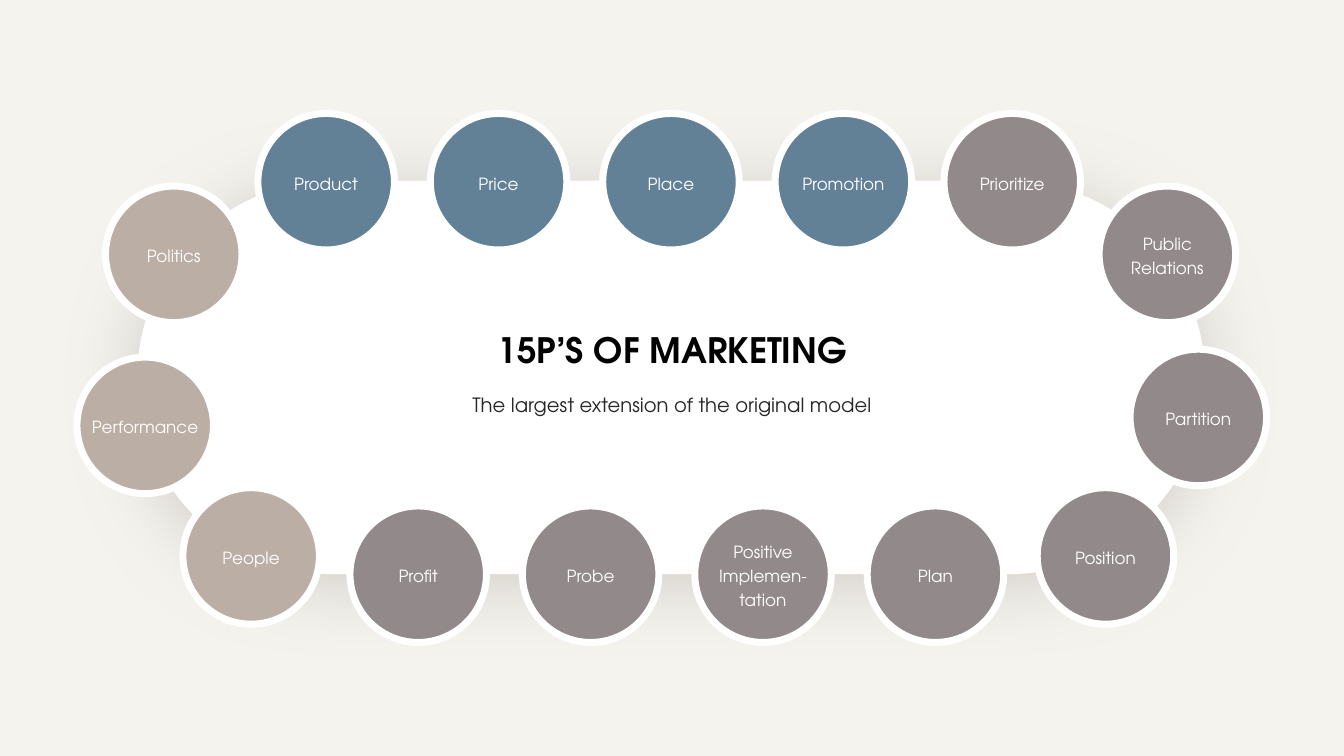
from dataclasses import dataclass

from lxml import etree
from pptx import Presentation
from pptx.dml.color import RGBColor
from pptx.enum.shapes import MSO_SHAPE
from pptx.enum.text import MSO_ANCHOR, MSO_AUTO_SIZE, PP_ALIGN
from pptx.oxml.ns import qn
from pptx.util import Cm, Pt

OVAL, PILL = MSO_SHAPE.OVAL, MSO_SHAPE.ROUNDED_RECTANGLE
TOP, MIDDLE = MSO_ANCHOR.TOP, MSO_ANCHOR.MIDDLE
CENTER, FIXED = PP_ALIGN.CENTER, MSO_AUTO_SIZE.NONE


@dataclass(frozen=True)
class Theme:
    font: str = "TeX Gyre Adventor"
    back: str = "F4F3EE"
    white: str = "FFFFFF"
    shade: str = "D1CCC6"
    blue: str = "628196"
    gray: str = "92898A"
    sand: str = "BBAEA5"
    black: str = "000000"
    dark: str = "262626"
    head: int = 25
    sub: int = 14
    label: int = 12


theme = Theme()


def paint(fill, color):
    fill.solid()
    fill.fore_color.rgb = RGBColor.from_string(color)


def write(shape, text, size, color, anchor=TOP, wrap=True, bold=False):
    frame = shape.text_frame
    frame.text = text
    for key, value in {"auto_size": FIXED, "word_wrap": wrap,
                       "vertical_anchor": anchor}.items():
        setattr(frame, key, value)
    line = frame.paragraphs[0]
    line.alignment = CENTER
    font = line.runs[0].font
    for key, value in {"name": theme.font, "size": Pt(size), "bold": bold}.items():
        setattr(font, key, value)
    font.color.rgb = RGBColor.from_string(color)


deck = Presentation()
deck.slide_width, deck.slide_height = Cm(33.87), Cm(19.05)
slide = deck.slides.add_slide(deck.slide_layouts[5])
shapes = slide.shapes
paint(slide.background.fill, theme.back)

# White pill with a soft shadow
pill = shapes.add_shape(PILL, Cm(3.46), Cm(4.55), Cm(26.91), Cm(9.92))
pill.adjustments[0] = 0.5
paint(pill.fill, theme.white)
pill.line.fill.background()
pill.shadow.inherit = False
effects = pill.element.spPr.find(qn("a:effectLst"))
shadow = etree.SubElement(effects, qn("a:outerShdw"), blurRad=str(Pt(55)),
                          dist=str(Pt(7)), dir="5400000", algn="ctr", rotWithShape="0")
etree.SubElement(shadow, qn("a:srgbClr"), val=theme.shade)

# Circles, clockwise: label, colour, centre x and y in cm
SIZE, STEP = 3.44, 4.345
top = ["Product", "Price", "Place", "Promotion"]
low = ["Profit", "Probe", "Positive Implemen-tation", "Plan"]
circles = [(name, theme.blue, 8.22 + STEP * i, 4.58) for i, name in enumerate(top)]
circles += [
    ("Prioritize", theme.gray, 25.51, 4.58),
    ("Public Relations", theme.gray, 29.42, 6.41),
    ("Partition", theme.gray, 30.2, 10.52),
    ("Position", theme.gray, 27.86, 14.01),
]
circles += [(name, theme.gray, 10.54 + STEP * i, 14.47)
            for i, name in reversed(list(enumerate(low)))]
circles += [
    ("People", theme.sand, 6.33, 14.01),
    ("Performance", theme.sand, 3.66, 10.72),
    ("Politics", theme.sand, 4.38, 6.41),
]
for name, color, x, y in circles:
    disc = shapes.add_shape(OVAL, Cm(x - SIZE / 2), Cm(y - SIZE / 2), Cm(SIZE), Cm(SIZE))
    disc.shadow.inherit = False
    paint(disc.fill, color)
    paint(disc.line.fill, theme.white)
    disc.line.width = Pt(5)
    write(disc, name, theme.label, theme.white, MIDDLE, wrap=" " in name)
    frame = disc.text_frame
    for side in ("left", "right", "top", "bottom"):
        setattr(frame, "margin_" + side, 0)
    frame.paragraphs[0].line_spacing = Pt(17)

# Title, brought in front of the pill, and the line below it
title = shapes.title
shapes.element.append(title.element)
for key, value in {"left": 9.5, "top": 8.15, "width": 14.88, "height": 1.32}.items():
    setattr(title, key, Cm(value))
write(title, "15P’S OF MARKETING", theme.head, theme.black, bold=True)

note = shapes.add_textbox(Cm(9.5), Cm(9.78), Cm(14.88), Cm(0.86))
write(note, "The largest extension of the original model", theme.sub, theme.dark)

deck.save("out.pptx")
